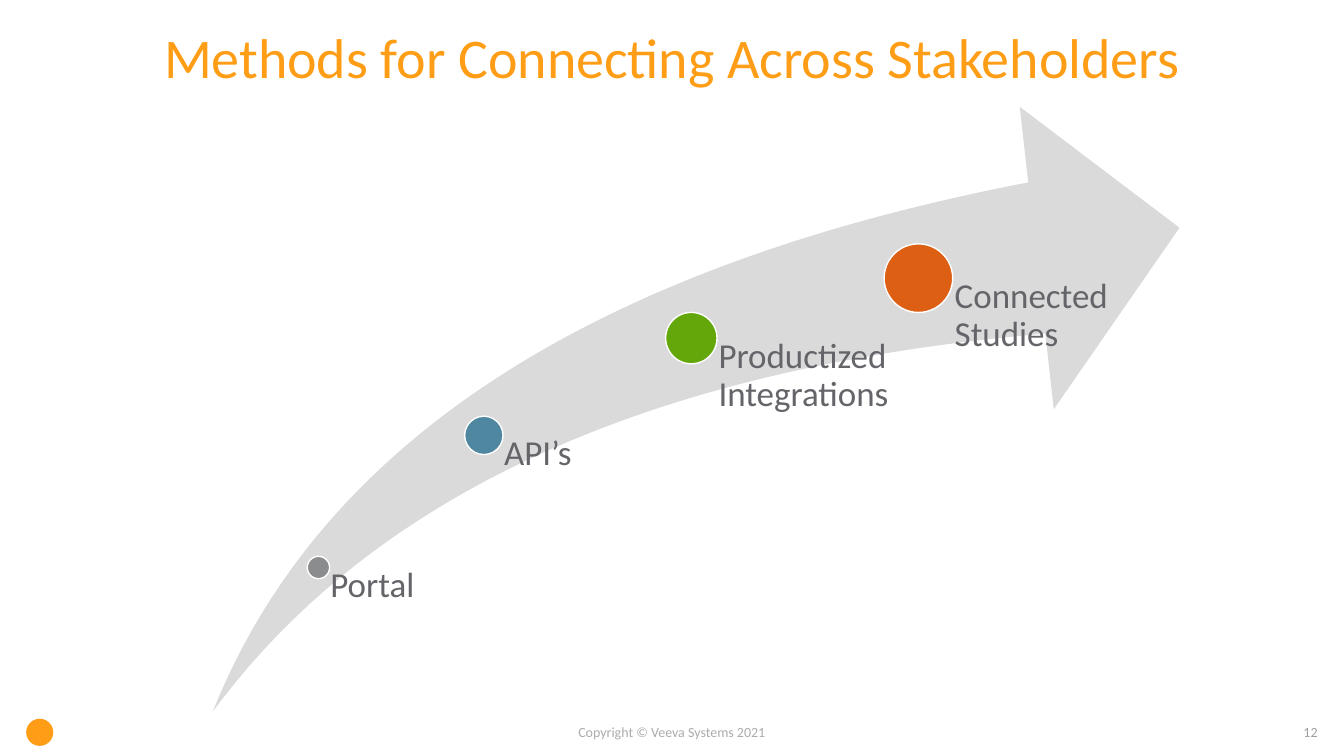
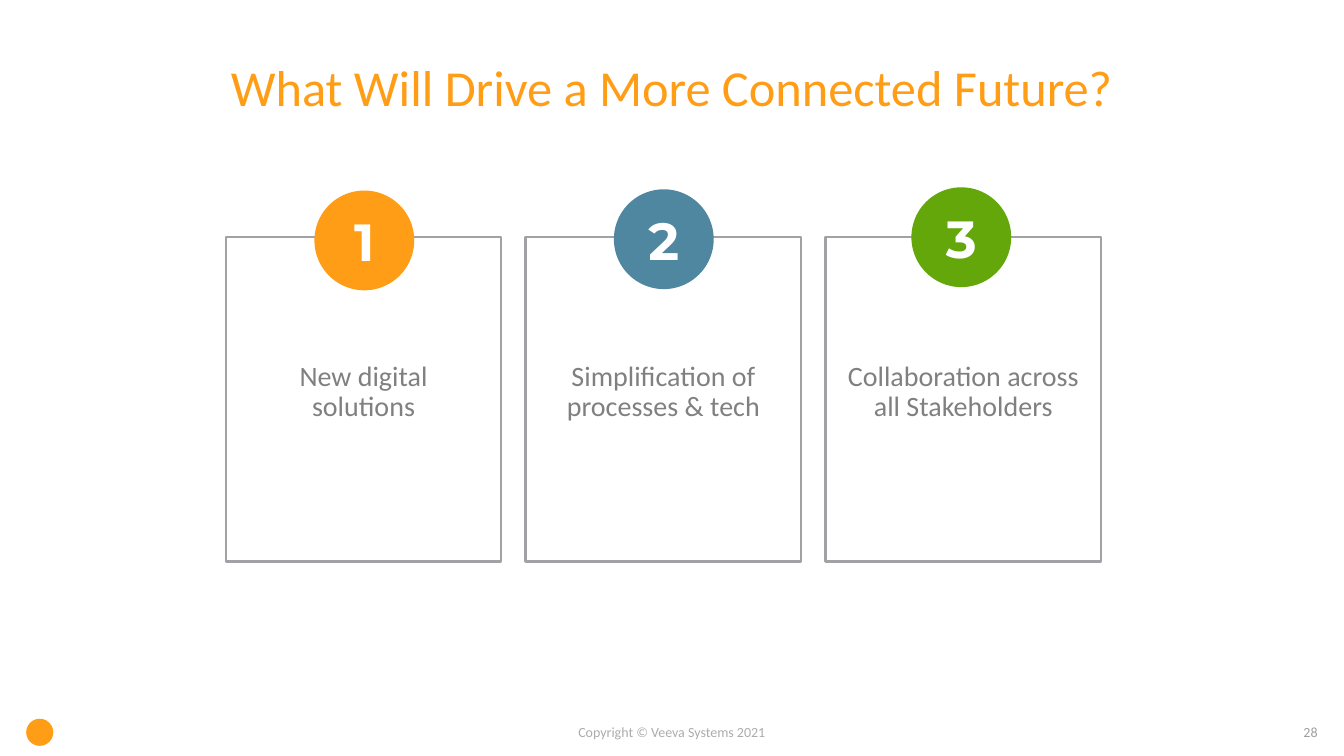
from pptx import Presentation
from pptx.dml.color import RGBColor
from pptx.enum.shapes import MSO_SHAPE as SHAPE
from pptx.enum.text import MSO_ANCHOR as ANCHOR, PP_ALIGN as ALIGN
from pptx.util import Pt

WHITE = RGBColor(0xFF, 0xFF, 0xFF)
ORANGE = RGBColor(0xFF, 0x9E, 0x16)
BLUE = RGBColor(0x4F, 0x86, 0xA0)
GREEN = RGBColor(0x63, 0xA7, 0x0A)
RUST = RGBColor(0xDD, 0x5F, 0x13)
DOT_GRAY = RGBColor(0x8B, 0x8C, 0x8E)
ARROW_GRAY = RGBColor(0xDA, 0xDA, 0xDB)
LABEL_GRAY = RGBColor(0x64, 0x65, 0x69)
BORDER_GRAY = RGBColor(0xA1, 0xA2, 0xA6)
BODY_GRAY = RGBColor(0x80, 0x80, 0x80)
NUMBER_GRAY = RGBColor(0x9F, 0x9F, 0xA1)
COPYRIGHT_GRAY = RGBColor(0xAF, 0xAB, 0xAB)


def write(sp, text, size, color, font="Calibri", bold=False, align=ALIGN.LEFT,
          anchor=ANCHOR.TOP, spacing=1.0, margins=None):
    """Fill a shape with one paragraph; margins are left, top, right, bottom."""
    tf = sp.text_frame
    tf.word_wrap = True
    tf.vertical_anchor = anchor
    if margins:
        (tf.margin_left, tf.margin_top,
         tf.margin_right, tf.margin_bottom) = map(Pt, margins)
    p = tf.paragraphs[0]
    p.alignment = align
    p.line_spacing = spacing
    r = p.add_run()
    r.text = text
    r.font.name = font
    r.font.size = Pt(size)
    r.font.bold = bold
    r.font.color.rgb = color


class Deck:
    def __init__(self):
        self.prs = Presentation()
        self.prs.slide_width, self.prs.slide_height = Pt(960), Pt(540)
        self.s = None

    def slide(self, title, number, title_top, title_height, title_size):
        """Start a slide with its title, footer mark, copyright and number."""
        self.s = self.prs.slides.add_slide(self.prs.slide_layouts[6])
        self.shape(SHAPE.OVAL, 18.7, 513.4, 19.4, 19.4, ORANGE)
        self.text(title, 21.6, title_top, 916.6, title_height, size=title_size,
                  color=ORANGE, align=ALIGN.CENTER, anchor=ANCHOR.MIDDLE,
                  spacing=0.7)
        self.text("Copyright © Veeva Systems 2021", 311, 513.4, 337.7, 19.4,
                  size=10, color=COPYRIGHT_GRAY, align=ALIGN.CENTER)
        self.text(str(number), 867.6, 513.4, 80.6, 19.4,
                  size=10, color=NUMBER_GRAY, align=ALIGN.RIGHT)

    def text(self, text, x, y, w, h, **style):
        sp = self.s.shapes.add_textbox(Pt(x), Pt(y), Pt(w), Pt(h))
        write(sp, text, **style)

    def shape(self, kind, x, y, w, h, fill, line=None, line_width=1):
        sp = self.s.shapes.add_shape(kind, Pt(x), Pt(y), Pt(w), Pt(h))
        sp.shadow.inherit = False
        sp.fill.solid()
        sp.fill.fore_color.rgb = fill
        if line is None:
            sp.line.fill.background()
        else:
            sp.line.color.rgb = line
            sp.line.width = Pt(line_width)
        return sp

    def stage(self, text, cx, cy, diameter, color, label_width, bottom):
        """Add a dot whose label box starts at the centre of the dot."""
        self.shape(SHAPE.OVAL, cx - diameter / 2, cy - diameter / 2,
                   diameter, diameter, color, WHITE)
        self.text(text, cx, cy, label_width, bottom - cy, size=25,
                  color=LABEL_GRAY, spacing=0.9,
                  margins=(0.53 * diameter, 0, 0, 0))

    def card(self, text, x):
        self.shape(SHAPE.RECTANGLE, x, 169.2, 196.6, 231.8, WHITE,
                   BORDER_GRAY, 1.75)
        self.text(text, x + 6.5, 254.9, 183.8, 51, size=20, color=BODY_GRAY,
                  align=ALIGN.CENTER, spacing=0.9)

    def badge(self, number, x, y, color):
        sp = self.shape(SHAPE.OVAL, x, y, 71.3, 71.3, color)
        write(sp, str(number), 37.3, WHITE, font="Montserrat", bold=True,
              align=ALIGN.CENTER, anchor=ANCHOR.MIDDLE)


def connecting_methods(deck):
    deck.slide("Methods for Connecting Across Stakeholders", 12, 7.9, 76.3, 40)
    top, height = 76.3, 432
    arrow = deck.shape(SHAPE.SWOOSH_ARROW, 152, top, 690.5, height, ARROW_GRAY)
    arrow.adjustments[0] = arrow.adjustments[1] = 0.25
    stages = [
        ("Portal", 227.5, 405.4, 16, DOT_GRAY, 118),
        ("API’s", 345.6, 311, 27.4, BLUE, 145),
        ("Productized Integrations", 493.8, 241.5, 36.7, GREEN, 145),
        ("Connected Studies", 656, 198.7, 49, RUST, 145),
    ]
    for stage in stages:
        deck.stage(*stage, bottom=top + height)


def connected_future(deck):
    deck.slide("What Will Drive a More Connected Future?", 28, 11.5, 111.6, 36)
    drivers = [
        ("New digital solutions", 224.6, 136.1, ORANGE),
        ("Simplification of processes & tech", 438.5, 135.2, BLUE),
        ("Collaboration across all Stakeholders", 651, 133.8, GREEN),
    ]
    for i, (text, badge_x, badge_y, color) in enumerate(drivers):
        deck.card(text, 161.3 + i * 214.2)
        deck.badge(i + 1, badge_x, badge_y, color)


def main():
    deck = Deck()
    connecting_methods(deck)
    connected_future(deck)
    deck.prs.save("out.pptx")


if __name__ == "__main__":
    main()
